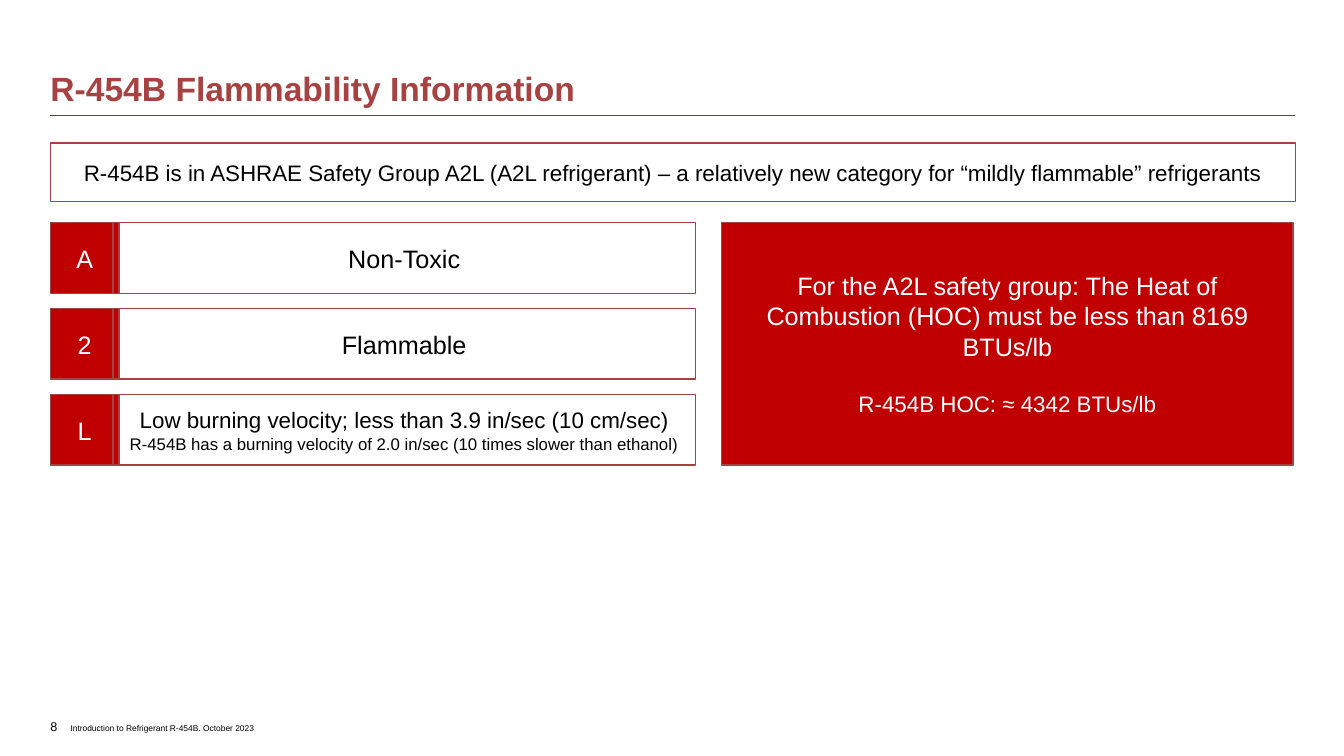
from dataclasses import dataclass

import pptx
import pptx.dml.color
import pptx.enum.shapes
import pptx.enum.text
import pptx.oxml.ns
import pptx.slide
import pptx.text.text
import pptx.util
from lxml import etree

Pt = pptx.util.Pt
ALIGN = pptx.enum.text.PP_ALIGN
ANCHOR = pptx.enum.text.MSO_ANCHOR

FONT = "Arial"
BLACK, WHITE, RED, BRICK, GREY = "000000", "FFFFFF", "C00000", "A64241", "524743"

LEFT, CONTENT_WIDTH = 36, 889.2
ROWS_TOP, ROW_HEIGHT, ROW_PITCH = 159.12, 50.4, 61.4
LETTER_WIDTH = 48.96
MEANING_LEFT, MEANING_WIDTH = 80.64, 416.16


@dataclass
class Line:
    text: str
    size: float
    space_before: float = 0


@dataclass
class Panel:
    left: float
    top: float
    width: float
    height: float
    lines: list[Line]
    fill: str | None = None


def rgb(value: str) -> pptx.dml.color.RGBColor:
    return pptx.dml.color.RGBColor.from_string(value)


def write_lines(frame: pptx.text.text.TextFrame, lines: list[Line], color: str,
                align: ALIGN = ALIGN.LEFT, bold: bool = False) -> None:
    frame.text = "\n".join(line.text for line in lines)
    for paragraph, line in zip(frame.paragraphs, lines):
        paragraph.alignment = align
        paragraph.space_before = Pt(line.space_before)
        font = paragraph.runs[0].font
        font.name, font.size, font.bold = FONT, Pt(line.size), bold
        font.color.rgb = rgb(color)


def remove_insets(frame: pptx.text.text.TextFrame) -> None:
    frame.margin_left = frame.margin_right = frame.margin_top = frame.margin_bottom = 0


def add_panel(slide: pptx.slide.Slide, panel: Panel) -> None:
    box = slide.shapes.add_shape(
        pptx.enum.shapes.MSO_SHAPE.RECTANGLE,
        Pt(panel.left), Pt(panel.top), Pt(panel.width), Pt(panel.height))
    box.shadow.inherit = False
    if panel.fill:
        box.fill.solid()
        box.fill.fore_color.rgb = rgb(panel.fill)
    else:
        box.fill.background()
    box.line.color.rgb = rgb(BRICK)
    box.line.width = Pt(1)
    box.text_frame.word_wrap = True
    box.text_frame.vertical_anchor = ANCHOR.MIDDLE
    write_lines(box.text_frame, panel.lines, WHITE if panel.fill else BLACK, ALIGN.CENTER)


def add_title(slide: pptx.slide.Slide, text: str) -> None:
    title = slide.shapes.title
    title.left, title.top = Pt(LEFT), Pt(15.12)
    title.width, title.height = Pt(CONTENT_WIDTH), Pt(62.64)
    frame = title.text_frame
    remove_insets(frame)
    frame.word_wrap = True
    frame.auto_size = pptx.enum.text.MSO_AUTO_SIZE.NONE
    frame.vertical_anchor = ANCHOR.BOTTOM
    write_lines(frame, [Line(text, 24)], BRICK, bold=True)
    frame.paragraphs[0].line_spacing = 0.9


def add_title_rule(slide: pptx.slide.Slide) -> None:
    rule = slide.shapes.add_connector(
        pptx.enum.shapes.MSO_CONNECTOR.STRAIGHT,
        Pt(LEFT), Pt(82.8), Pt(LEFT + CONTENT_WIDTH), Pt(82.8))
    rule.line.color.rgb = rgb(GREY)
    rule.line.width = Pt(0.75)
    etree.SubElement(rule._element.spPr, pptx.oxml.ns.qn("a:effectLst"))


def add_footer_text(slide: pptx.slide.Slide, left: float, top: float, width: float,
                    height: float, line: Line, anchor: ANCHOR) -> None:
    footer = slide.shapes.add_textbox(Pt(left), Pt(top), Pt(width), Pt(height))
    remove_insets(footer.text_frame)
    footer.text_frame.word_wrap = True
    footer.text_frame.vertical_anchor = anchor
    write_lines(footer.text_frame, [line], BLACK)


def main() -> None:
    deck = pptx.Presentation()
    deck.slide_width, deck.slide_height = Pt(960), Pt(540)
    slide = deck.slides.add_slide(deck.slide_layouts.get_by_name("Title Only"))

    add_title_rule(slide)
    add_footer_text(slide, LEFT, 510.48, 28.08, 17.28, Line("8", 9), ANCHOR.MIDDLE)
    add_footer_text(slide, 50.4, 516.24, 158.4, 7.2,
                    Line("Introduction to Refrigerant R-454B. October 2023", 6), ANCHOR.TOP)
    add_title(slide, "R-454B Flammability Information")

    safety_classes = {
        "A": [Line("Non-Toxic", 18)],
        "2": [Line("Flammable", 18)],
        "L": [
            Line("Low burning velocity; less than 3.9 in/sec (10 cm/sec)", 16),
            Line("R-454B has a burning velocity of 2.0 in/sec "
                 "(10 times slower than ethanol)", 12),
        ],
    }
    for row, (letter, meaning) in enumerate(safety_classes.items()):
        top = ROWS_TOP + row * ROW_PITCH
        add_panel(slide, Panel(LEFT, top, LETTER_WIDTH, ROW_HEIGHT, [Line(letter, 18)], RED))
        add_panel(slide, Panel(MEANING_LEFT, top, MEANING_WIDTH, ROW_HEIGHT, meaning))

    heat_of_combustion = [
        Line("For the A2L safety group: The Heat of Combustion (HOC) "
             "must be less than 8169 BTUs/lb", 18),
        Line("R-454B HOC: ≈ 4342 BTUs/lb", 16, space_before=21),
    ]
    add_panel(slide, Panel(515.52, ROWS_TOP, 408.24, 2 * ROW_PITCH + ROW_HEIGHT,
                           heat_of_combustion, RED))

    safety_group = Line("R-454B is in ASHRAE Safety Group A2L (A2L refrigerant) – a relatively "
                        "new category for “mildly flammable” refrigerants", 16)
    add_panel(slide, Panel(LEFT, 102.24, CONTENT_WIDTH, 41.76, [safety_group]))

    deck.save("out.pptx")


if __name__ == "__main__":
    main()
